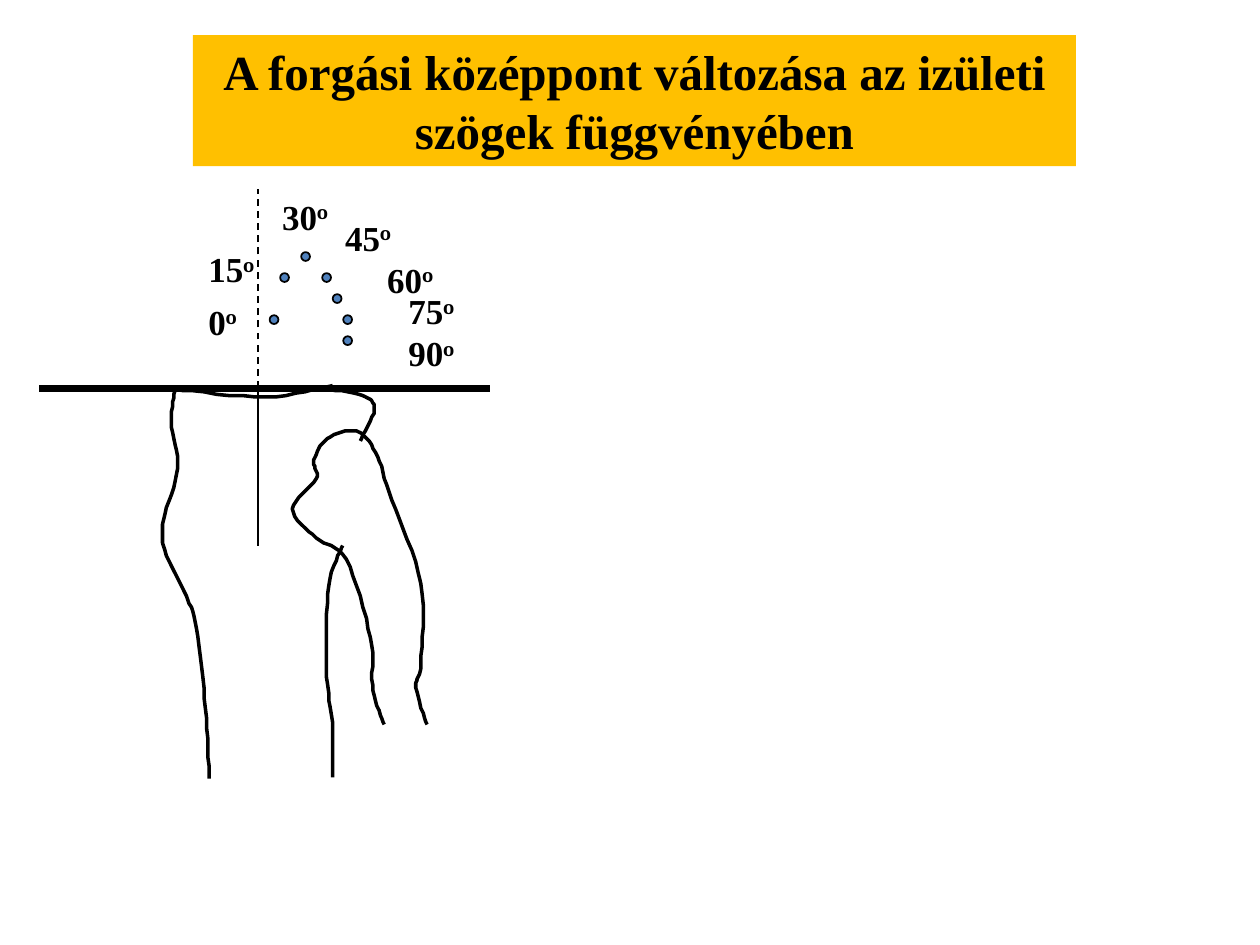
from pptx import Presentation
from pptx import util as u
from pptx.dml.color import RGBColor
from pptx.enum import dml, shapes, text
from pptx.oxml import parse_xml
from pptx.oxml.ns import nsdecls

# Grid of 1000 columns by 750 rows on a 10 x 7.5 inch slide
COLUMNS, ROWS = 1000, 750
CELL = u.Inches(10) // COLUMNS
COLORS = {"ink": "000000", "dot": "4F81BD", "banner": "FFC000"}
FONT = {"name": "Times New Roman", "bold": True}

# Diagram of the rotation centres: origin and pitch in grid cells
ORIGIN, PITCH = (214, 150), 8.35
DOT_SIZE = 7
DEGREE_STEP = 15
# One pair per angle, in pitches: rotation centre, label
ANGLES = [((0, 12), (-7, 10)), ((1, 8), (-7, 5)), ((3, 6), (0, 0)),
          ((5, 8), (6, 2)), ((6, 10), (10, 6)), ((7, 12), (12, 9)),
          ((7, 14), (12, 13))]

# Key points of the smooth bone outlines: column, row
OUTLINES = {
    "joint surface": [(139, 309), (211, 315), (264, 306)],
    "left side": [(139, 308), (136, 335), (141, 372), (130, 412), (131, 437),
                  (146, 469), (156, 499), (163, 562), (166, 618)],
    "upper condyle": [(255, 308), (288, 314), (297, 325), (286, 350)],
    "right bone": [(305, 575), (296, 548), (294, 506), (275, 444), (251, 427),
                   (232, 404), (251, 380), (249, 365), (260, 348), (283, 342),
                   (298, 359), (311, 397), (334, 463), (334, 527), (330, 546),
                   (339, 575)],
    "inner side": [(272, 433), (261, 465), (259, 530), (264, 578), (264, 617)],
}


def grid(*cells):
    return [u.Emu(round(cell * CELL)) for cell in cells]


def color(name):
    return RGBColor.from_string(COLORS[name])


def set_values(target, values):
    for name, value in values.items():
        setattr(target, name, value)


def style_line(shape, points, dash=None):
    shape.line.color.rgb = color("ink")
    set_values(shape.line, {"width": u.Pt(points), "dash_style": dash})


def fill_shape(shape, name):
    shape.shadow.inherit = False
    shape.fill.solid()
    shape.fill.fore_color.rgb = color(name)


def add_run(paragraph, wording, size, font=FONT):
    run = paragraph.add_run()
    run.text = wording
    set_values(run.font, {**font, "size": u.Pt(size)})
    run.font.color.rgb = color("ink")
    return run


def smooth(points, steps=8):
    """Catmull-Rom curve through the key points."""
    padded = [points[0], *points, points[-1]]
    for before, start, end, after in zip(padded, padded[1:], padded[2:], padded[3:]):
        for step in range(steps):
            t = step / steps
            yield tuple(
                b + t / 2 * (c - a + t * (2 * a - 5 * b + 4 * c - d
                                          + t * (3 * (b - c) + d - a)))
                for a, b, c, d in zip(before, start, end, after))
    yield points[-1]


def add_outline(slide, key_points):
    start, *rest = smooth(key_points)
    builder = slide.shapes.build_freeform(*start, scale=CELL)
    builder.add_line_segments(rest, close=False)
    shape = builder.convert_to_shape()
    shape.shadow.inherit = False
    shape.fill.background()
    style_line(shape, 2)


def add_straight(slide, start, end, points, dash=None):
    line = slide.shapes.add_connector(
        shapes.MSO_CONNECTOR.STRAIGHT, *grid(*start, *end))
    style_line(line, points, dash)
    line._element.spPr.append(parse_xml(f"<a:effectLst {nsdecls('a')}/>"))


def place(pitches):
    return [origin + count * PITCH for origin, count in zip(ORIGIN, pitches)]


def add_dot(slide, centre):
    dot = slide.shapes.add_shape(
        shapes.MSO_SHAPE.OVAL, *grid(*place(centre), DOT_SIZE, DOT_SIZE))
    fill_shape(dot, "dot")
    style_line(dot, 1)


def add_angle(slide, degrees, position):
    box = slide.shapes.add_textbox(*grid(*place(position), 67, 43))
    set_values(box.text_frame, {"word_wrap": True,
                                "auto_size": text.MSO_AUTO_SIZE.SHAPE_TO_FIT_TEXT})
    paragraph = box.text_frame.paragraphs[0]
    add_run(paragraph, str(degrees), 20)
    sign = add_run(paragraph, "o", 20, {**FONT, "name": "Cambria"})
    sign.font._element.set("baseline", "30000")


def add_title(slide, wording):
    banner = slide.shapes.add_shape(
        shapes.MSO_SHAPE.RECTANGLE, *grid(153, 28, 701, 104))
    fill_shape(banner, "banner")
    banner.line.fill.background()
    set_values(banner.text_frame, {"word_wrap": True,
                                   "vertical_anchor": text.MSO_ANCHOR.TOP})
    paragraph = banner.text_frame.paragraphs[0]
    paragraph.alignment = text.PP_ALIGN.CENTER
    add_run(paragraph, wording, 28)


def main():
    presentation = Presentation()
    set_values(presentation, {"slide_width": CELL * COLUMNS,
                              "slide_height": CELL * ROWS})
    slide = presentation.slides.add_slide(presentation.slide_layouts[6])

    # Knee joint
    for key_points in OUTLINES.values():
        add_outline(slide, key_points)

    # Joint line and long axis
    add_straight(slide, (31, 308), (389, 308), 4)
    add_straight(slide, (205, 308), (205, 433), 1)
    add_straight(slide, (205, 308), (205, 150), 1, dml.MSO_LINE.DASH)

    # Rotation centres and their angles
    for index, (centre, position) in enumerate(ANGLES):
        add_dot(slide, centre)
        add_angle(slide, index * DEGREE_STEP, position)

    add_title(slide, "A forgási középpont változása az izületi szögek függvényében")
    presentation.save("out.pptx")


if __name__ == "__main__":
    main()
